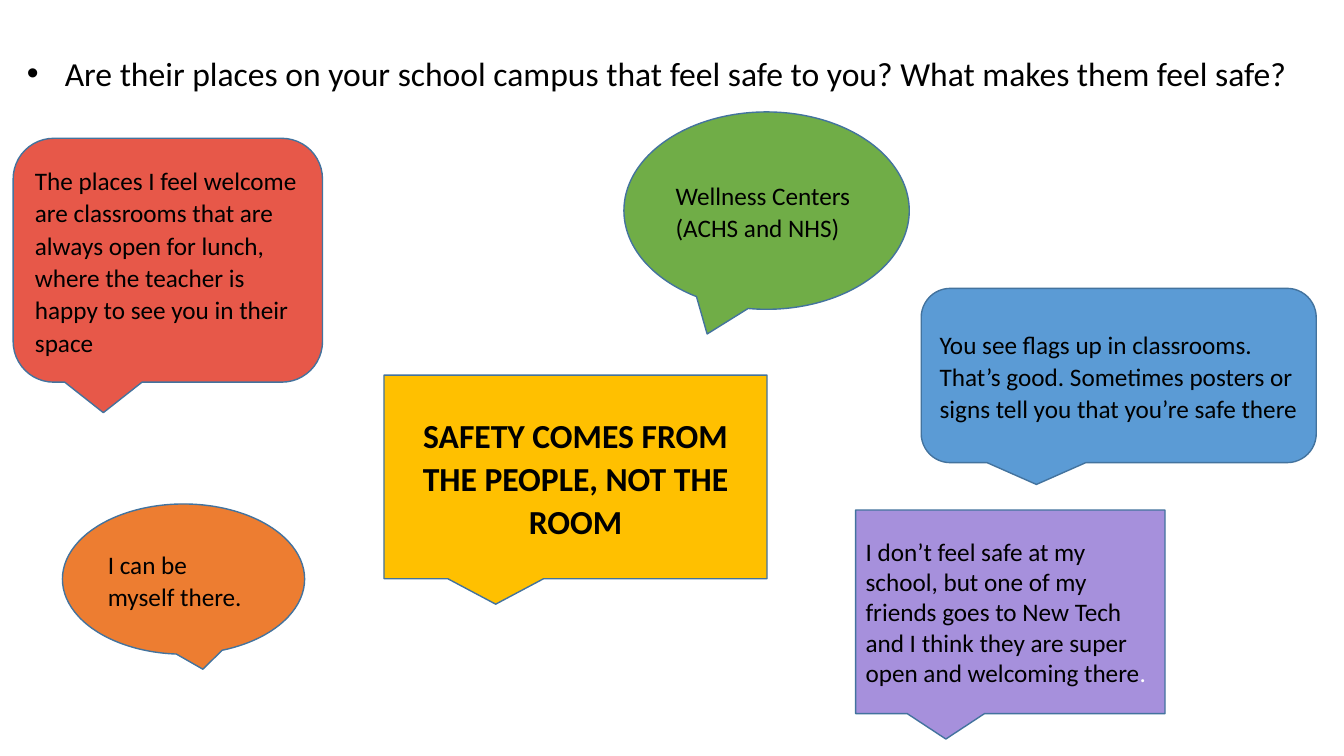
from dataclasses import dataclass

from lxml import etree
from pptx import Presentation
from pptx import util as u
from pptx.dml.color import RGBColor
from pptx.enum import shapes, text
from pptx.oxml import ns


@dataclass(frozen=True)
class Theme:
    font: str = "Calibri"
    body_size: int = 18
    large_size: int = 24
    line_spacing: float = 1.07
    ink: str = "000000"
    white: str = "FFFFFF"
    outline: str = "43739E"
    red: str = "E75849"
    blue: str = "5B9BD5"
    green: str = "70AD47"
    orange: str = "ED7D31"
    yellow: str = "FFC000"
    purple: str = "A690DC"


THEME = Theme()
ROUNDED = shapes.MSO_SHAPE.ROUNDED_RECTANGULAR_CALLOUT
OVAL = shapes.MSO_SHAPE.OVAL_CALLOUT
RECTANGULAR = shapes.MSO_SHAPE.RECTANGULAR_CALLOUT


def points(*lengths):
    return [u.Pt(length) for length in lengths]


def format_run(run, size, color=THEME.ink, bold=False):
    run.font.name = THEME.font
    run.font.size = u.Pt(size)
    run.font.bold = bold
    run.font.color.rgb = RGBColor.from_string(color)


def add_bullet(paragraph, indent):
    properties = paragraph._p.get_or_add_pPr()
    properties.set("marL", str(u.Pt(indent)))
    properties.set("indent", str(-u.Pt(indent)))
    etree.SubElement(properties, ns.qn("a:buFont")).set("typeface", "Arial")
    etree.SubElement(properties, ns.qn("a:buChar")).set("char", "•")


def add_question(slide, box, wording):
    frame = slide.shapes.add_textbox(*points(*box)).text_frame
    frame.word_wrap = False
    frame.auto_size = text.MSO_AUTO_SIZE.SHAPE_TO_FIT_TEXT
    paragraph = frame.paragraphs[0]
    paragraph.text = wording
    paragraph.line_spacing = THEME.line_spacing
    paragraph.space_after = u.Pt(8)
    add_bullet(paragraph, 27)
    format_run(paragraph.runs[0], THEME.large_size)


def add_callout(slide, kind, box, color, wording, size=THEME.body_size,
                bold=False, align=text.PP_ALIGN.LEFT,
                spacing=THEME.line_spacing, tail=None):
    shape = slide.shapes.add_shape(kind, *points(*box))
    shape.shadow.inherit = False
    shape.fill.solid()
    shape.fill.fore_color.rgb = RGBColor.from_string(color)
    shape.line.color.rgb = RGBColor.from_string(THEME.outline)
    shape.line.width = u.Pt(1)
    if tail:
        shape.adjustments[0], shape.adjustments[1] = tail
    frame = shape.text_frame
    frame.word_wrap = True
    frame.vertical_anchor = text.MSO_ANCHOR.MIDDLE
    paragraph = frame.paragraphs[0]
    paragraph.text = wording
    paragraph.alignment = align
    paragraph.line_spacing = spacing
    format_run(paragraph.runs[0], size, bold=bold)
    return paragraph


def main():
    presentation = Presentation()
    presentation.slide_width, presentation.slide_height = points(960, 540)
    slide = presentation.slides.add_slide(presentation.slide_layouts[6])

    add_question(slide, (12.2, 32.4, 928, 36.7),
                 "Are their places on your school campus that feel safe to you? "
                 "What makes them feel safe?")
    add_callout(slide, ROUNDED, (9.4, 98.8, 221, 174.2), THEME.red,
                "The places I feel welcome are classrooms that are always open "
                "for lunch, where the teacher is happy to see you in their space")
    add_callout(slide, ROUNDED, (658, 206, 282.2, 124.5), THEME.blue,
                "You see flags up in classrooms. That’s good. Sometimes posters "
                "or signs tell you that you’re safe there")
    add_callout(slide, OVAL, (445.7, 80, 203.8, 141), THEME.green,
                "Wellness Centers (ACHS and NHS)")
    add_callout(slide, OVAL, (44.6, 360, 173, 107.3), THEME.orange,
                "I can be myself there.", tail=(0.08, 0.6))
    add_callout(slide, RECTANGULAR, (274.3, 268, 273.6, 145.4), THEME.yellow,
                "SAFETY COMES FROM THE PEOPLE, NOT THE ROOM",
                size=THEME.large_size, bold=True, align=text.PP_ALIGN.CENTER)
    feeling = add_callout(
        slide, RECTANGULAR, (611.2, 364.3, 221, 145.4), THEME.purple,
        "I don’t feel safe at my school, but one of my friends goes to "
        "New Tech and I think they are super open and welcoming there",
        spacing=1.0)
    full_stop = feeling.add_run()
    full_stop.text = "."
    format_run(full_stop, THEME.body_size, THEME.white)

    presentation.save("out.pptx")


if __name__ == "__main__":
    main()
